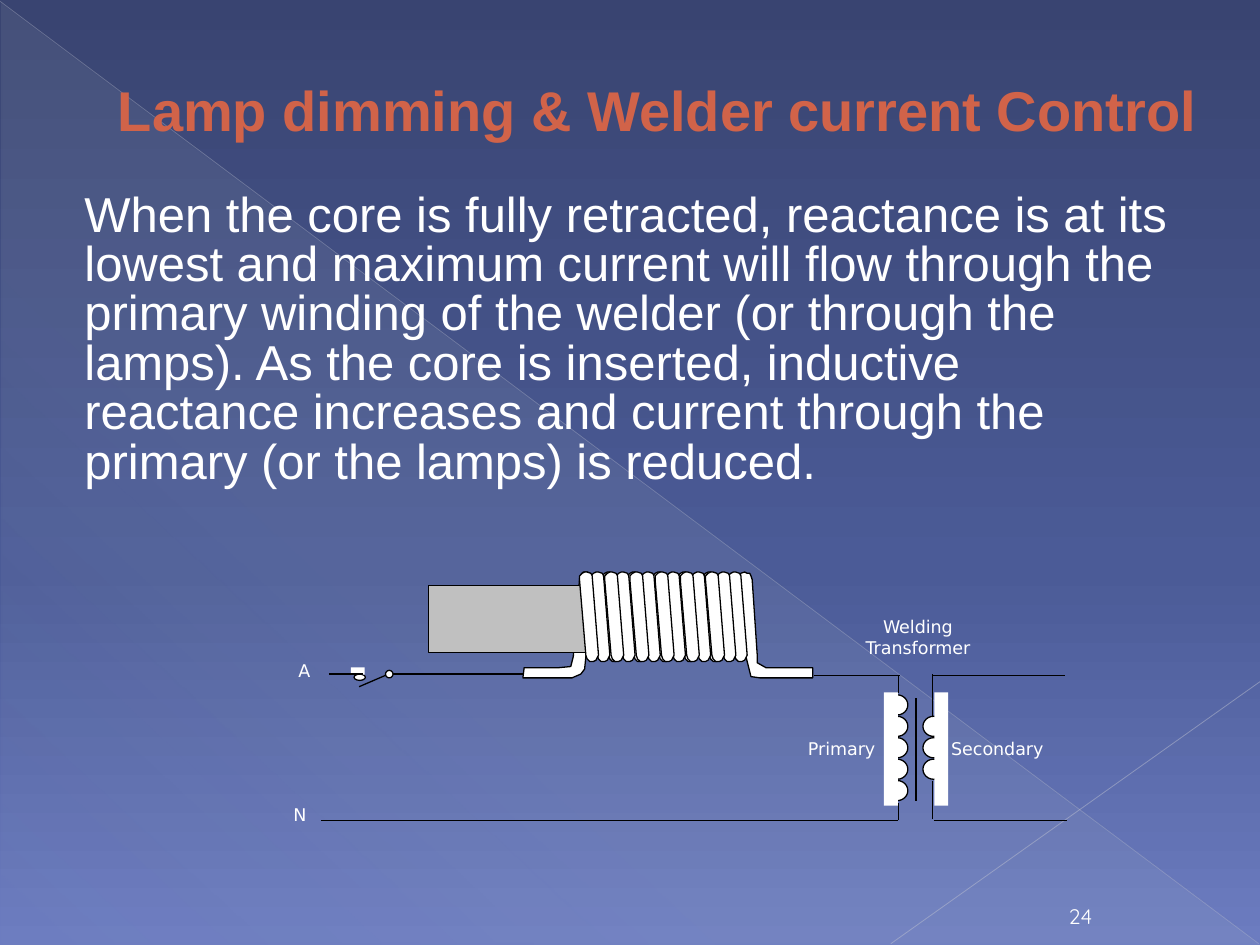
from dataclasses import dataclass

from lxml.etree import SubElement
from pptx import Presentation
from pptx.dml.color import RGBColor
from pptx.enum.shapes import MSO_CONNECTOR, MSO_SHAPE
from pptx.enum.text import MSO_ANCHOR, PP_ALIGN
from pptx.oxml.ns import qn
from pptx.util import Inches, Pt


@dataclass(frozen=True)
class Theme:
    background: tuple = ((0, "394471", 100), (60, "4B5B97", 100), (100, "6C7CC0", 100))
    glow: tuple = ((0, "C5D1D7", 10), (70, "C5D1D7", 8), (100, "C5D1D7", 1))
    diagonal: str = "BABECD"
    corner: str = "C2C5D2"
    title: str = "D16349"
    title_edge: str = "914533"
    white: str = "FFFFFF"
    ink: str = "000000"
    core: str = "C0C0C0"
    text_font: str = "Arial"
    label_font: str = "DejaVu Sans"
    number_font: str = "Quicksand"
    title_size: int = 32
    body_size: int = 28
    number_size: int = 12
    label_size: int = 10
    stroke: float = 0.75


THEME = Theme()

LEFT_LEAD = (
    (4.16, 5.3), (4.43, 5.3), (4.53, 5.29), (4.55, 5.21), (4.6, 4.59), (4.61, 4.57),
    (4.62, 4.55), (4.63, 4.54), (4.66, 4.54), (4.68, 4.55), (4.7, 4.57), (4.7, 4.61),
    (4.65, 5.21), (4.64, 5.31), (4.61, 5.35), (4.54, 5.38), (4.15, 5.38),
)
RIGHT_LEAD = (
    (6.45, 5.38), (6.45, 5.3), (6.08, 5.3), (6.01, 5.26), (6.01, 5.2), (5.97, 4.6),
    (5.96, 4.57), (5.95, 4.55), (5.93, 4.55), (5.91, 4.54), (5.88, 4.55), (5.87, 4.58),
    (5.87, 4.61), (5.92, 5.21), (5.95, 5.33), (5.96, 5.37), (6.03, 5.38),
)
TURN = (
    (0.15, 5.2), (0.1, 4.57), (0.09, 4.55), (0.06, 4.54), (0.04, 4.54), (0.02, 4.55),
    (0, 4.57), (0, 4.61), (0.05, 5.2), (0.06, 5.23), (0.08, 5.25), (0.11, 5.25),
    (0.13, 5.24),
)


def set_gradient(element, stops, angle):
    gradient = element.find(".//" + qn("a:gradFill"))
    for child in list(gradient):
        gradient.remove(child)
    stop_list = SubElement(gradient, qn("a:gsLst"))
    for position, color, opacity in stops:
        stop = SubElement(stop_list, qn("a:gs"), pos=str(position * 1000))
        tint = SubElement(stop, qn("a:srgbClr"), val=color)
        SubElement(tint, qn("a:alpha"), val=str(opacity * 1000))
    SubElement(gradient, qn("a:lin"), ang=str(angle * 60000), scaled="0")


def finish_shape(shape, fill, outlined=True):
    shape.shadow.inherit = False
    shape.fill.solid()
    shape.fill.fore_color.rgb = RGBColor.from_string(fill)
    if outlined:
        shape.line.color.rgb = RGBColor.from_string(THEME.ink)
        shape.line.width = Pt(THEME.stroke)
    else:
        shape.line.fill.background()


def add_preset(slide, kind, place, fill=THEME.white, rotation=0, outlined=True):
    shape = slide.shapes.add_shape(kind, *map(Inches, place))
    shape.rotation = rotation
    finish_shape(shape, fill, outlined)


def add_outline(slide, points):
    corners = [(Inches(x), Inches(y)) for x, y in points]
    builder = slide.shapes.build_freeform(*corners[0])
    builder.add_line_segments(corners[1:], close=True)
    finish_shape(builder.convert_to_shape(), THEME.white)


def add_turn(slide, left):
    add_outline(slide, [(left + x, y) for x, y in TURN])


def add_wire(slide, ends, color=THEME.ink, width=THEME.stroke, opacity=100):
    wire = slide.shapes.add_connector(MSO_CONNECTOR.STRAIGHT, *map(Inches, ends))
    wire.line.color.rgb = RGBColor.from_string(color)
    wire.line.width = Pt(width)
    properties = wire.element.spPr
    if opacity < 100:
        tint = properties.find(".//" + qn("a:srgbClr"))
        SubElement(tint, qn("a:alpha"), val=str(opacity * 1000))
    SubElement(properties, qn("a:effectLst"))


def add_text(slide, place, text, font=THEME.label_font, size=THEME.label_size,
             color=THEME.white, align=PP_ALIGN.LEFT, anchor=MSO_ANCHOR.TOP,
             bold=False, indent=0, spacing=None):
    box = slide.shapes.add_textbox(*map(Inches, place))
    frame = box.text_frame
    frame.word_wrap = True
    frame.vertical_anchor = anchor
    frame.margin_left = Inches(0.1 + indent)
    para = frame.paragraphs[0]
    para.alignment = align
    para.line_spacing = spacing
    span = para.add_run()
    span.text = text
    span.font.name = font
    span.font.size = Pt(size)
    span.font.bold = bold
    span.font.color.rgb = RGBColor.from_string(color)
    return span


def add_title(slide, text):
    span = add_text(slide, (0.23, 0.47, 9.45, 0.79), text, THEME.text_font,
                    THEME.title_size, THEME.title, PP_ALIGN.CENTER,
                    MSO_ANCHOR.MIDDLE, bold=True, indent=0.53)
    properties = span.font._element
    edge = SubElement(properties, qn("a:ln"), w=str(Pt(0.5)))
    fill = SubElement(edge, qn("a:solidFill"))
    SubElement(fill, qn("a:srgbClr"), val=THEME.title_edge)
    properties.insert(0, edge)


def add_backdrop(slide):
    slide.background.fill.gradient()
    set_gradient(slide.element.find(".//" + qn("p:bgPr")), THEME.background, 90)
    glow = slide.shapes.add_shape(
        MSO_SHAPE.RIGHT_TRIANGLE, *map(Inches, (0.01, 0.02, 9.99, 7.48)))
    finish_shape(glow, THEME.white, outlined=False)
    glow.fill.gradient()
    set_gradient(glow.element.spPr, THEME.glow, 133)
    add_wire(slide, (0, 0.01, 9.99, 7.49), THEME.diagonal, 0.39, 35)
    add_wire(slide, (10, 5.41, 7.07, 7.49), THEME.corner, 0.47, 45)


def add_inductor(slide):
    add_outline(slide, LEFT_LEAD)
    for group in range(6):
        if group == 1:
            add_outline(slide, RIGHT_LEAD)
        for step in range(2 if group == 0 else 3):
            add_turn(slide, 4.78 + 0.2 * group - 0.09 * step)
    add_preset(slide, MSO_SHAPE.RECTANGLE, (3.4, 4.65, 1.25, 0.53), THEME.core)
    add_turn(slide, 4.6)


def add_winding(slide, left, top, loops, mask):
    for loop in range(loops):
        place = (left, top + 0.17 * loop, 0.16, 0.17)
        add_preset(slide, MSO_SHAPE.OVAL, place, rotation=90)
    add_preset(slide, MSO_SHAPE.RECTANGLE, mask, rotation=90, outlined=False)


def add_transformer(slide):
    add_winding(slide, 7.33, 5.68, 3, (7.02, 5.89, 0.9, 0.11))
    add_winding(slide, 7.04, 5.51, 5, (6.62, 5.89, 0.9, 0.11))
    for ends in (
        (7.4, 5.69, 7.4, 5.35), (7.4, 6.5, 7.4, 6.2),
        (7.13, 5.5, 7.13, 5.36), (7.13, 6.51, 7.13, 6.37),
        (7.27, 5.54, 7.27, 6.36),
        (7.4, 5.36, 8.45, 5.36), (7.41, 6.51, 8.47, 6.51),
        (2.55, 6.51, 7.13, 6.51), (6.46, 5.36, 7.14, 5.36),
    ):
        add_wire(slide, ends)


def add_switch(slide):
    add_preset(slide, MSO_SHAPE.OVAL, (3.06, 5.32, 0.06, 0.06), rotation=270)
    add_wire(slide, (2.85, 5.45, 3.06, 5.36))
    add_wire(slide, (3.12, 5.35, 4.16, 5.35))
    add_preset(slide, MSO_SHAPE.OVAL, (2.83, 5.33, 0.05, 0.09), rotation=270)
    add_preset(slide, MSO_SHAPE.RECTANGLE, (2.81, 5.27, 0.06, 0.11),
               rotation=270, outlined=False)
    add_wire(slide, (2.61, 5.35, 2.88, 5.35))


def main():
    deck = Presentation()
    deck.slide_width, deck.slide_height = Inches(10), Inches(7.5)
    page = deck.slides.add_slide(deck.slide_layouts[6])
    add_backdrop(page)
    add_title(page, "Lamp dimming & Welder current Control")
    add_text(page, (0.5, 1.48, 9, 2.74),
             "When the core is fully retracted, reactance is at its lowest and maximum "
             "current will flow through the primary winding of the welder (or through "
             "the lamps). As the core is inserted, inductive reactance increases and "
             "current through the primary (or the lamps) is reduced.",
             THEME.text_font, THEME.body_size, indent=0.07, spacing=0.84)
    add_text(page, (8.3, 7.09, 0.55, 0.33), "24", THEME.number_font,
             THEME.number_size, align=PP_ALIGN.CENTER, anchor=MSO_ANCHOR.BOTTOM)
    add_inductor(page)
    add_transformer(page)
    add_switch(page)
    add_text(page, (2.27, 5.19, 0.44, 0.3), "A")
    add_text(page, (2.23, 6.33, 0.44, 0.3), "N")
    for place, label in (
        ((6.74, 4.84, 1.09, 0.47), "Welding Transformer"),
        ((6.26, 5.81, 0.84, 0.33), "Primary"),
        ((7.42, 5.81, 0.99, 0.36), "Secondary"),
    ):
        add_text(page, place, label, align=PP_ALIGN.CENTER)
    deck.save("out.pptx")


if __name__ == "__main__":
    main()
